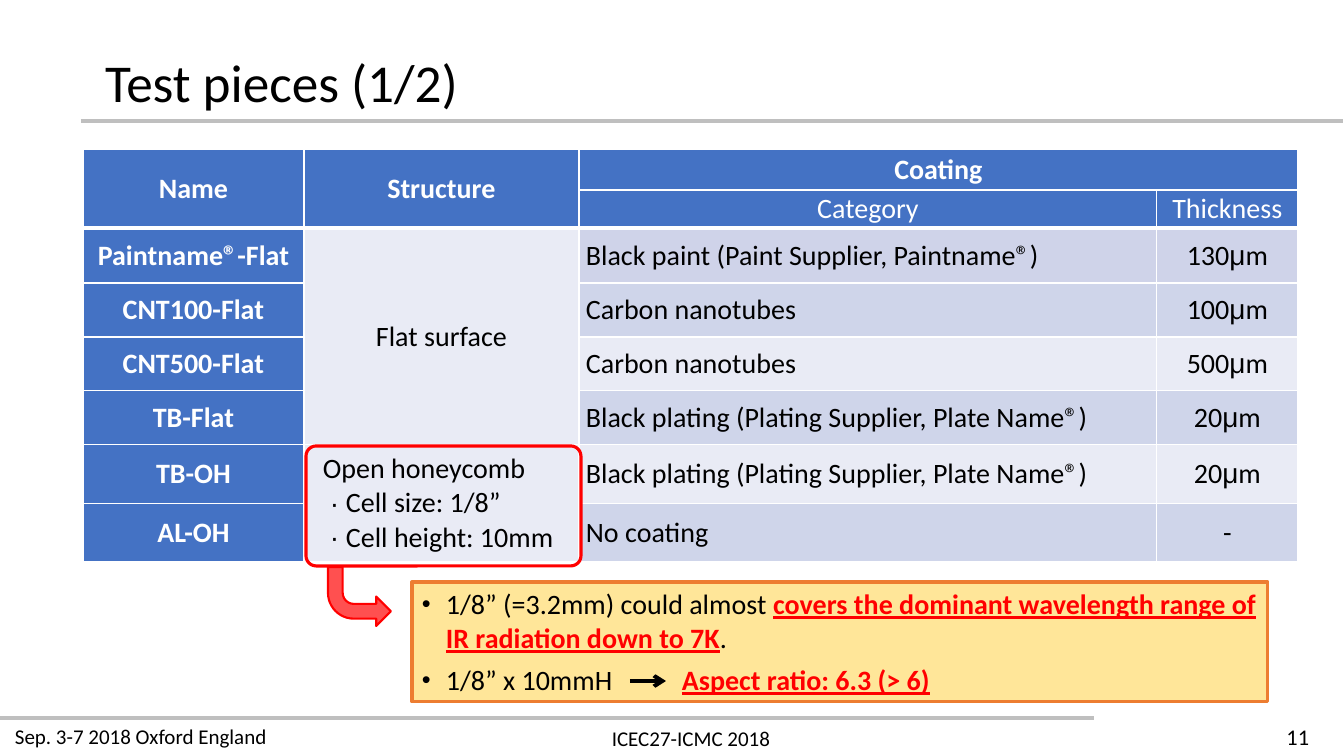
import pptx
import pptx.dml.color
import pptx.enum.shapes
import pptx.enum.text
import pptx.oxml
import pptx.oxml.ns
import pptx.util
from lxml import etree

TITLE = "Test pieces (1/2)"
HEADINGS = ["Name", "Structure", "Coating"]
SUBHEADINGS = ["Category", "Thickness"]
PLATING = "Black plating (Plating Supplier, Plate Name®)"
PIECES = [  # name, coating category, thickness in micrometres, band colour
    ("Paintname®-Flat", "Black paint (Paint Supplier, Paintname®)", "130", "band_first"),
    ("CNT100-Flat", "Carbon nanotubes", "100", "band_dark"),
    ("CNT500-Flat", "Carbon nanotubes", "500", "band_light"),
    ("TB-Flat", PLATING, "20", "band_dark"),
    ("TB-OH", PLATING, "20", "band_light"),
    ("AL-OH", "No coating", None, "band_dark"),
]
FLAT = "Flat surface"
HONEYCOMB = ["Open honeycomb", "Cell size: 1/8”", "Cell height: 10mm"]
STRONG = dict(color="red", bold=True, underline=True)
NOTES = [
    [("1/8” (=3.2mm) could almost ", {}),
     ("covers the dominant wavelength range of IR radiation down to 7K", STRONG),
     (".", {})],
    [("1/8” x 10mmH\t", {}), ("Aspect ratio: 6.3 (> 6)", STRONG)],
]
FOOTER = [  # text, box, size, alignment
    ("Sep. 3-7 2018 Oxford England", (5, 719, 274, 35), 15, "LEFT"),
    ("ICEC27-ICMC 2018", (601, 721, 180, 35), 15, "CENTER"),
    ("11", (1223, 718, 96, 38), 16, "RIGHT"),
]
RULES = [(81, 121, 1343), (0, 718, 1094)]  # left, y, right

COLORS = {
    "white": "FFFFFF", "black": "000000", "gray": "BFBFBF", "blue": "4472C4",
    "band_first": "CFD3E9", "band_dark": "CFD5EA", "band_light": "E9EBF5",
    "red": "FF0000", "arrow": "FF5050", "note": "FFE699", "orange": "ED7D31",
}
COLUMNS = [221, 275, 578, 141]
ROWS = [41, 38, 55, 54, 54, 54, 59, 58]
TABLE_LEFT, TABLE_TOP = 83, 149
HEADER_ROWS = 2
FLAT_ROWS = 4

ALIGN = pptx.enum.text.PP_ALIGN
ANCHOR = pptx.enum.text.MSO_ANCHOR
SHAPE = pptx.enum.shapes.MSO_SHAPE


def px(length):
    return round(length * 914400 / 100.8)


def rgb(name):
    return pptx.dml.color.RGBColor.from_string(COLORS[name])


def add_xml(parent, tag, **attributes):
    return etree.SubElement(parent, pptx.oxml.ns.qn(tag), attributes)


def write(para, text, size=20, font="Calibri", color="black", bold=False,
          underline=False, align=None):
    """Append one formatted run to a paragraph."""
    span = para.add_run()
    span.text = text
    span.font.size = pptx.util.Pt(size)
    span.font.name = font
    span.font.color.rgb = rgb(color)
    span.font.bold = bold
    span.font.underline = underline
    if align:
        para.alignment = getattr(ALIGN, align)


def indent(para, left, hanging=0, bullet=None, percent=100, tab=None):
    properties = para._p.get_or_add_pPr()
    properties.set("marL", str(px(left)))
    properties.set("indent", str(-px(hanging)))
    if bullet:
        add_xml(properties, "a:buSzPct", val=str(percent * 1000))
        add_xml(properties, "a:buFont", typeface="Arial")
        add_xml(properties, "a:buChar", char=bullet)
    if tab:
        tabs = add_xml(properties, "a:tabLst")
        add_xml(tabs, "a:tab", pos=str(px(tab)), algn="l")


def paragraph(frame, index):
    return frame.paragraphs[0] if index == 0 else frame.add_paragraph()


def add_line(page, left, y, right, color, width, arrow=False):
    line = page.shapes.add_connector(
        pptx.enum.shapes.MSO_CONNECTOR.STRAIGHT, px(left), px(y), px(right), px(y))
    line.line.color.rgb = rgb(color)
    line.line.width = pptx.util.Pt(width)
    if arrow:
        add_xml(line.line._get_or_add_ln(), "a:tailEnd", type="arrow")
    add_xml(line._element.spPr, "a:effectLst")


def add_shape(page, kind, box, fill, outline, width):
    shape = page.shapes.add_shape(kind, *map(px, box))
    shape.shadow.inherit = False
    if fill:
        shape.fill.solid()
        shape.fill.fore_color.rgb = rgb(fill)
    else:
        shape.fill.background()
    shape.line.color.rgb = rgb(outline)
    shape.line.width = pptx.util.Pt(width)
    return shape


def style_cell(cell, fill, bottom):
    """Set white borders, fill, margins and middle anchoring."""
    cell.margin_left = cell.margin_right = px(7)
    cell.margin_top = cell.margin_bottom = 0
    cell.vertical_anchor = ANCHOR.MIDDLE
    properties = cell._tc.get_or_add_tcPr()
    for side, width in (("L", 1), ("R", 1), ("T", 1), ("B", bottom)):
        border = add_xml(properties, "a:ln" + side, w=str(pptx.util.Pt(width)))
        add_xml(add_xml(border, "a:solidFill"), "a:srgbClr", val=COLORS["white"])
    cell.fill.solid()
    cell.fill.fore_color.rgb = rgb(fill)


def add_pieces_table(page):
    table = page.shapes.add_table(
        len(ROWS), len(COLUMNS), px(TABLE_LEFT), px(TABLE_TOP),
        px(sum(COLUMNS)), px(sum(ROWS))).table
    for column, width in zip(table.columns, COLUMNS):
        column.width = px(width)
    for row, height in zip(table.rows, ROWS):
        row.height = px(height)

    first_honeycomb = HEADER_ROWS + FLAT_ROWS
    for start, end in (((0, 0), (1, 0)), ((0, 1), (1, 1)), ((0, 2), (0, 3)),
                       ((HEADER_ROWS, 1), (first_honeycomb - 1, 1)),
                       ((first_honeycomb, 1), (len(ROWS) - 1, 1))):
        table.cell(*start).merge(table.cell(*end))

    for row in range(len(ROWS)):
        for column in range(len(COLUMNS)):
            header = row < HEADER_ROWS
            if header or column == 0:
                fill = "blue"
            else:
                fill = "band_light" if column == 1 else PIECES[row - HEADER_ROWS][3]
            thick = header and (row == 1 or column < 2)
            style_cell(table.cell(row, column), fill, 3 if thick else 1)

    def first_para(row, column):
        return table.cell(row, column).text_frame.paragraphs[0]

    for column, heading in enumerate(HEADINGS):
        write(first_para(0, column), heading, color="white", bold=True, align="CENTER")
    for column, heading in enumerate(SUBHEADINGS, 2):
        write(first_para(1, column), heading, color="white", align="CENTER")
    for row, (name, category, thickness, _) in enumerate(PIECES, HEADER_ROWS):
        write(first_para(row, 0), name, color="white", bold=True, align="CENTER")
        write(first_para(row, 2), category, align="JUSTIFY")
        para = first_para(row, 3)
        write(para, thickness or "-", align="CENTER")
        if thickness:
            write(para, "μ", font="Arial")
            write(para, "m")
    write(first_para(HEADER_ROWS, 1), FLAT, align="CENTER")
    frame = table.cell(first_honeycomb, 1).text_frame
    for index, text in enumerate(HONEYCOMB):
        para = paragraph(frame, index)
        if index == 0:
            indent(para, 12)
        else:
            indent(para, 35, 16, "·")
        write(para, text)


def add_notes(page):
    ring = add_shape(page, SHAPE.ROUNDED_RECTANGLE, (306, 446, 275, 120), None, "red", 2.25)
    ring.adjustments[0] = 0.085
    arrow = add_shape(page, SHAPE.BENT_ARROW, (328, 567, 63, 59), "arrow", "red", 1.5)
    arrow._element.spPr.xfrm.set("flipV", "1")
    frame = add_shape(page, SHAPE.RECTANGLE, (412, 582, 856, 120),
                      "note", "orange", 2.25).text_frame
    frame.word_wrap = True
    frame.vertical_anchor = ANCHOR.TOP
    for index, spans in enumerate(NOTES):
        para = paragraph(frame, index)
        indent(para, 24, 24, "•", 90, tab=260 if index else None)
        if index:
            para.space_before = pptx.util.Pt(6)
        for text, style in spans:
            write(para, text, align="LEFT", **style)
    add_line(page, 630, 681, 666, "black", 2.75, arrow=True)


def main():
    deck = pptx.Presentation()
    deck.slide_width, deck.slide_height = px(1344), px(756)
    page = deck.slides.add_slide(deck.slide_layouts[5])
    for rule in RULES:
        add_line(page, *rule, "gray", 2.25)
    for text, box, size, align in FOOTER:
        frame = page.shapes.add_textbox(*map(px, box)).text_frame
        frame.word_wrap = True
        write(frame.paragraphs[0], text, size=size, align=align)
    title = page.shapes.title
    title.left, title.top, title.width, title.height = map(px, (95, 38, 1097, 81))
    title.text_frame.vertical_anchor = ANCHOR.BOTTOM
    title.text_frame.paragraphs[0].line_spacing = 0.9
    write(title.text_frame.paragraphs[0], TITLE, size=38, align="LEFT")
    add_pieces_table(page)
    add_notes(page)
    deck.save("out.pptx")


if __name__ == "__main__":
    main()
